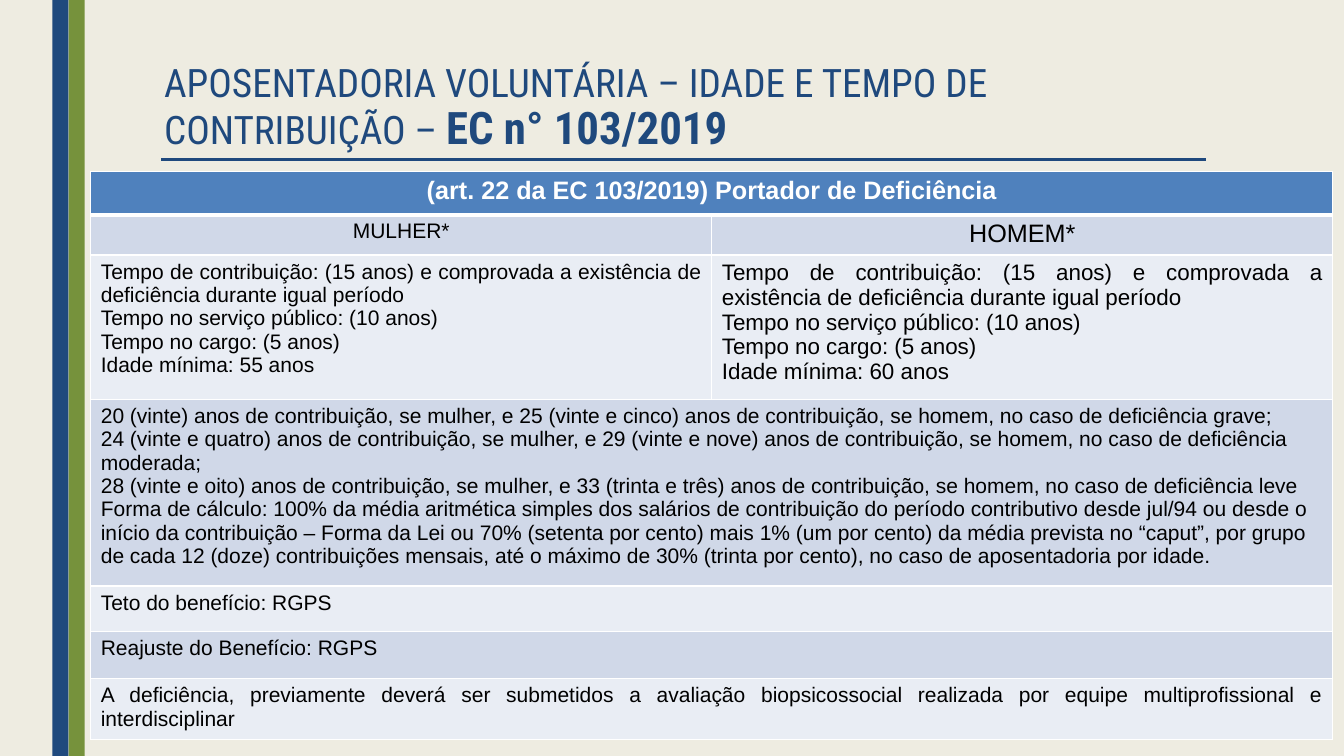
from lxml.etree import SubElement
from pptx import Presentation
from pptx.dml.color import RGBColor
from pptx.enum.shapes import MSO_CONNECTOR, MSO_SHAPE
from pptx.enum.text import MSO_ANCHOR, PP_ALIGN
from pptx.oxml.ns import qn
from pptx.util import Inches, Pt

NAVY, GREEN, CREAM, WHITE, BLACK = "1F497D", "76923C", "EEECE1", "FFFFFF", "000000"
HEADER_BLUE, BAND_DARK, BAND_LIGHT = "4F81BD", "D0D8E8", "E9EDF4"
CENTER, LEFT, JUSTIFY = PP_ALIGN.CENTER, PP_ALIGN.LEFT, PP_ALIGN.JUSTIFY
ROW_HEIGHTS = [0.43, 0.39, 1.4, 1.81, 0.45, 0.47, 0.59]


def requirements(minimum_age):
    """Return the requirement lines for one sex."""
    return [
        "Tempo de contribuição: (15 anos) e comprovada a existência de deficiência durante igual período",
        "Tempo no serviço público: (10 anos)",
        "Tempo no cargo: (5 anos)",
        f"Idade mínima: {minimum_age} anos",
    ]


CALCULATION = [
    "20 (vinte) anos de contribuição, se mulher, e 25 (vinte e cinco) anos de contribuição, "
    "se homem, no caso de deficiência grave;",
    "24 (vinte e quatro) anos de contribuição, se mulher, e 29 (vinte e nove) anos de contribuição, "
    "se homem, no caso de deficiência moderada;",
    "28 (vinte e oito) anos de contribuição, se mulher, e 33 (trinta e três) anos de contribuição, "
    "se homem, no caso de deficiência leve",
    "Forma de cálculo: 100% da média aritmética simples dos salários de contribuição do período "
    "contributivo desde jul/94 ou desde o início da contribuição – Forma da Lei ou 70% (setenta por "
    "cento) mais 1% (um por cento) da média prevista no “caput”, por grupo de cada 12 (doze) "
    "contribuições mensais, até o máximo de 30% (trinta por cento), no caso de aposentadoria por idade.",
]
ASSESSMENT = (
    "A deficiência, previamente deverá ser submetidos a avaliação biopsicossocial realizada por "
    "equipe multiprofissional e interdisciplinar"
)
RULES = [
    [(["(art. 22 da EC 103/2019) Portador de Deficiência"], 18, CENTER)],
    [(["MULHER*"], 15, CENTER), (["HOMEM*"], 18, CENTER)],
    [(requirements(55), 15, JUSTIFY), (requirements(60), 16, JUSTIFY)],
    [(CALCULATION, 15, LEFT)],
    [(["Teto do benefício: RGPS"], 15, JUSTIFY)],
    [(["Reajuste do Benefício: RGPS"], 15, JUSTIFY)],
    [([ASSESSMENT], 15, JUSTIFY)],
]


def color(hex_value):
    """Turn a hex string into a colour."""
    return RGBColor.from_string(hex_value)


def style_run(run, font_name, size, hex_value, bold=False):
    """Set the font of one run."""
    run.font.name = font_name
    run.font.size = Pt(size)
    run.font.bold = bold
    run.font.color.rgb = color(hex_value)


def add_stripe(slide, left, height, hex_value):
    """Draw a vertical stripe from the top of the slide."""
    stripe = slide.shapes.add_shape(
        MSO_SHAPE.RECTANGLE, Inches(left), Inches(0), Inches(0.16), Inches(height))
    stripe.shadow.inherit = False
    stripe.fill.solid()
    stripe.fill.fore_color.rgb = color(hex_value)
    stripe.line.fill.background()


def add_title_rule(slide):
    """Draw the line below the title."""
    rule = slide.shapes.add_connector(
        MSO_CONNECTOR.STRAIGHT, Inches(1.6), Inches(1.58), Inches(11.96), Inches(1.58))
    rule.line.color.rgb = color(NAVY)
    rule.line.width = Pt(2.25)
    SubElement(rule._element.spPr, qn("a:effectLst"))


def add_title(slide):
    """Write the two-weight title."""
    title = slide.shapes.add_textbox(Inches(1.53), Inches(0.59), Inches(10.39), Inches(0.79))
    frame = title.text_frame
    frame.word_wrap = True
    frame.vertical_anchor = MSO_ANCHOR.TOP
    paragraph = frame.paragraphs[0]
    paragraph.line_spacing = 0.89
    for text, size, bold in [
        ("APOSENTADORIA VOLUNTÁRIA – IDADE E TEMPO DE CONTRIBUIÇÃO – ", 28, False),
        ("EC n° 103/2019", 32, True),
    ]:
        run = paragraph.add_run()
        run.text = text
        style_run(run, "Roboto Condensed", size, NAVY, bold)


def set_borders(cell, top, bottom):
    """Give a cell white borders, with widths in points for top and bottom."""
    properties = cell._tc.get_or_add_tcPr()
    for side, width in [("L", 1), ("R", 1), ("T", top), ("B", bottom)]:
        border = SubElement(properties, qn(f"a:ln{side}"), w=str(Pt(width)))
        fill = SubElement(border, qn("a:solidFill"))
        SubElement(fill, qn("a:srgbClr"), val=WHITE)


def fill_cell(cell, lines, size, alignment, is_header):
    """Write and format the lines of a cell."""
    cell.text_frame.text = "\n".join(lines)
    for paragraph in cell.text_frame.paragraphs:
        paragraph.alignment = alignment
        for run in paragraph.runs:
            style_run(run, "Arial", size, WHITE if is_header else BLACK, is_header)


def add_rules_table(slide):
    """Build the table of retirement rules."""
    table = slide.shapes.add_table(
        len(RULES), 2, Inches(0.9), Inches(1.7), Inches(12.32), Inches(sum(ROW_HEIGHTS))).table
    for column in table.columns:
        column.width = Inches(6.16)
    for index, (contents, height) in enumerate(zip(RULES, ROW_HEIGHTS)):
        table.rows[index].height = Inches(height)
        is_header = index == 0
        background = HEADER_BLUE if is_header else (BAND_LIGHT, BAND_DARK)[index % 2]
        for cell in table.rows[index].cells:
            set_borders(cell, 3 if index == 1 else 1, 3 if is_header else 1)
            cell.fill.solid()
            cell.fill.fore_color.rgb = color(background)
        if len(contents) == 1:
            table.cell(index, 0).merge(table.cell(index, 1))
        for position, (lines, size, alignment) in enumerate(contents):
            fill_cell(table.cell(index, position), lines, size, alignment, is_header)


def main():
    """Build and save the slide."""
    presentation = Presentation()
    presentation.slide_width = Inches(13.33)
    presentation.slide_height = Inches(7.5)
    slide = presentation.slides.add_slide(presentation.slide_layouts[6])
    slide.background.fill.solid()
    slide.background.fill.fore_color.rgb = color(CREAM)
    add_stripe(slide, 0.68, 7.52, GREEN)
    add_stripe(slide, 0.52, 7.5, NAVY)
    add_title_rule(slide)
    add_title(slide)
    add_rules_table(slide)
    presentation.save("out.pptx")


if __name__ == "__main__":
    main()
